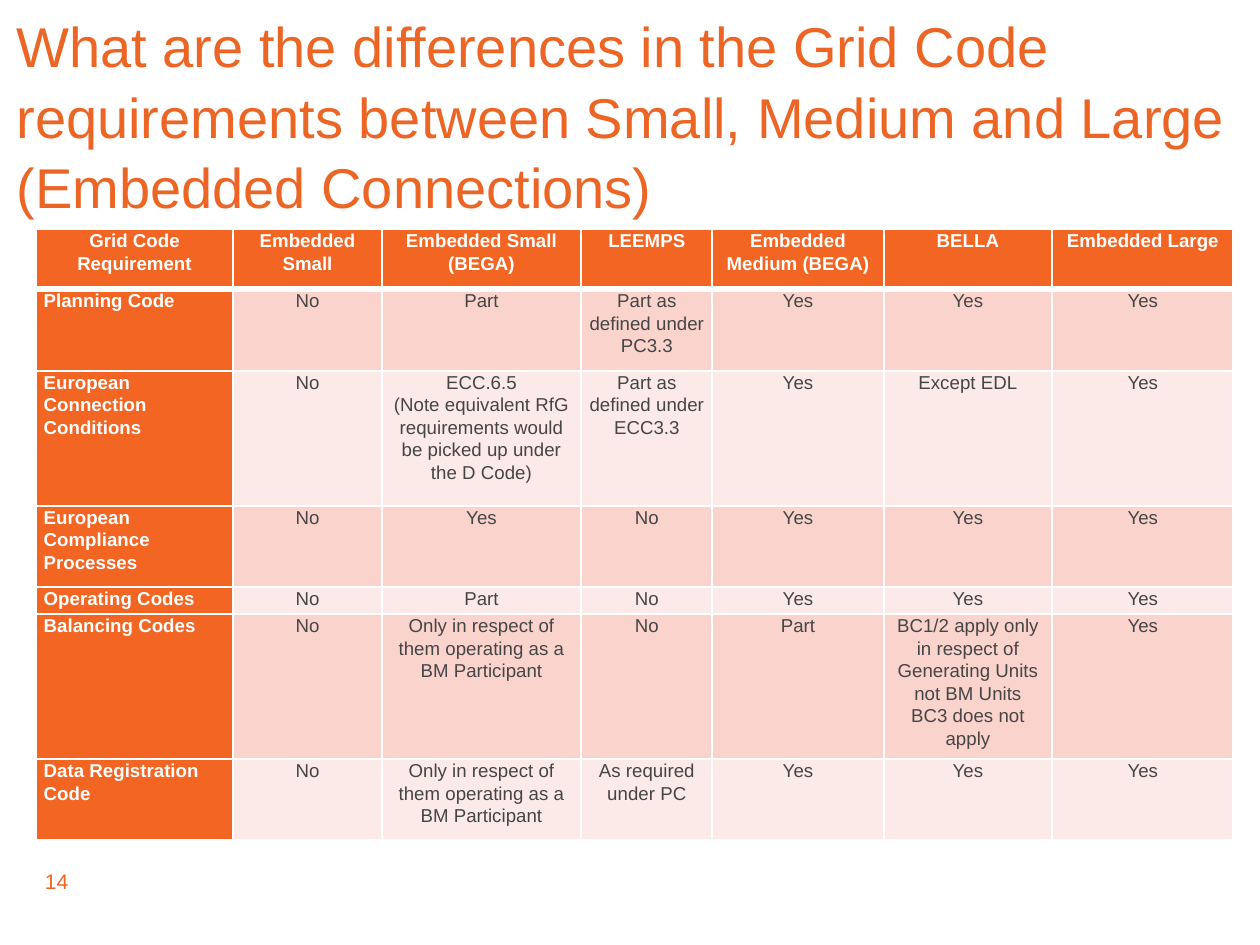
from lxml import etree
from pptx import Presentation
from pptx.enum import text
from pptx.oxml import ns
from pptx.util import Cm, Pt
from pptx.dml.color import RGBColor

# Content
TITLE = ["What are the differences in the Grid Code requirements between Small, Medium and Large",
         "(Embedded Connections)"]
PAGE = "14"
OPERATING = "Only in respect of them operating as a BM Participant"
REQUIREMENTS = [
    ["Grid Code Requirement", "Embedded Small", "Embedded Small (BEGA)", "LEEMPS",
     "Embedded Medium (BEGA)", "BELLA", "Embedded Large"],
    ["Planning Code", "No", "Part", "Part as defined under PC3.3", "Yes", "Yes", "Yes"],
    ["European Connection Conditions", "No",
     ["ECC.6.5", "(Note equivalent RfG requirements would be picked up under the D Code)"],
     "Part as defined under ECC3.3", "Yes", "Except EDL", "Yes"],
    ["European Compliance Processes", "No", "Yes", "No", "Yes", "Yes", "Yes"],
    ["Operating Codes", "No", "Part", "No", "Yes", "Yes", "Yes"],
    ["Balancing Codes", "No", OPERATING, "No", "Part",
     ["BC1/2 apply only in respect of Generating Units not BM Units", "BC3 does not apply"], "Yes"],
    ["Data Registration Code", "No", OPERATING, "As required under PC", "Yes", "Yes", "Yes"],
]
COLUMN_WIDTHS = [2.99, 2.24, 3.02, 1.98, 2.59, 2.55, 2.74]
ROW_HEIGHTS = [0.91, 1.23, 2.04, 1.23, 0.41, 2.19, 1.23]
COLOURS = {"title": "EC6525", "orange": "F26522", "white": "FFFFFF", "body": "454545",
           "dark band": "FAD3CD", "light band": "FCEAE8"}


def rgb(name):
    return RGBColor.from_string(COLOURS[name])


def write(frame, lines, size, colour, bold=False, align=text.PP_ALIGN.LEFT, spacing=1.0):
    frame.word_wrap = True
    for number, line in enumerate(lines):
        paragraph = frame.paragraphs[0] if number == 0 else frame.add_paragraph()
        paragraph.alignment = align
        paragraph.line_spacing = spacing
        run = paragraph.add_run()
        run.text = line
        run.font.name = "Arial"
        run.font.size = Pt(size)
        run.font.bold = bold
        run.font.color.rgb = rgb(colour)


def add_borders(cell, **widths):
    """Border widths in points, keyed by side in schema order: L, R, T, B."""
    properties = cell._tc.get_or_add_tcPr()
    for position, (side, width) in enumerate(widths.items()):
        line = etree.Element(ns.qn(f"a:ln{side}"), w=str(Pt(width)))
        fill = etree.SubElement(line, ns.qn("a:solidFill"))
        etree.SubElement(fill, ns.qn("a:srgbClr"), val=COLOURS["white"])
        properties.insert(position, line)


deck = Presentation()
deck.slide_width, deck.slide_height = Cm(19.05), Cm(14.28)
slide = deck.slides.add_slide(deck.slide_layouts[6])

# Page number
page_box = slide.shapes.add_textbox(Cm(0.68), Cm(13.13), Cm(1.75), Cm(0.38)).text_frame
page_box.margin_left = page_box.margin_right = page_box.margin_top = page_box.margin_bottom = 0
write(page_box, [PAGE], 9, "orange")

# Title
heading = slide.shapes.add_textbox(0, 0, Cm(19), Cm(3.33)).text_frame
write(heading, TITLE, 24, "title", spacing=1.05)

# Requirements table
table = slide.shapes.add_table(
    len(ROW_HEIGHTS), len(COLUMN_WIDTHS), Cm(0.54), Cm(3.46),
    Cm(sum(COLUMN_WIDTHS)), Cm(sum(ROW_HEIGHTS))).table
for column, width in zip(table.columns, COLUMN_WIDTHS):
    column.width = Cm(width)
for row, height in zip(table.rows, ROW_HEIGHTS):
    row.height = Cm(height)

for r, requirement in enumerate(REQUIREMENTS):
    band = "dark band" if r % 2 else "light band"
    for c, entry in enumerate(requirement):
        cell = table.cell(r, c)
        is_header = r == 0 or c == 0
        cell.margin_left = cell.margin_right = Cm(0.12)
        cell.margin_top = cell.margin_bottom = 0
        cell.fill.solid()
        cell.fill.fore_color.rgb = rgb("orange" if is_header else band)
        add_borders(cell, L=1, R=1, T=3 if r == 1 else 1, B=3 if r == 0 else 1)
        write(cell.text_frame, entry if isinstance(entry, list) else [entry], 8,
              "white" if is_header else "body", bold=is_header, spacing=1.07,
              align=text.PP_ALIGN.LEFT if c == 0 and r else text.PP_ALIGN.CENTER)

deck.save("out.pptx")
